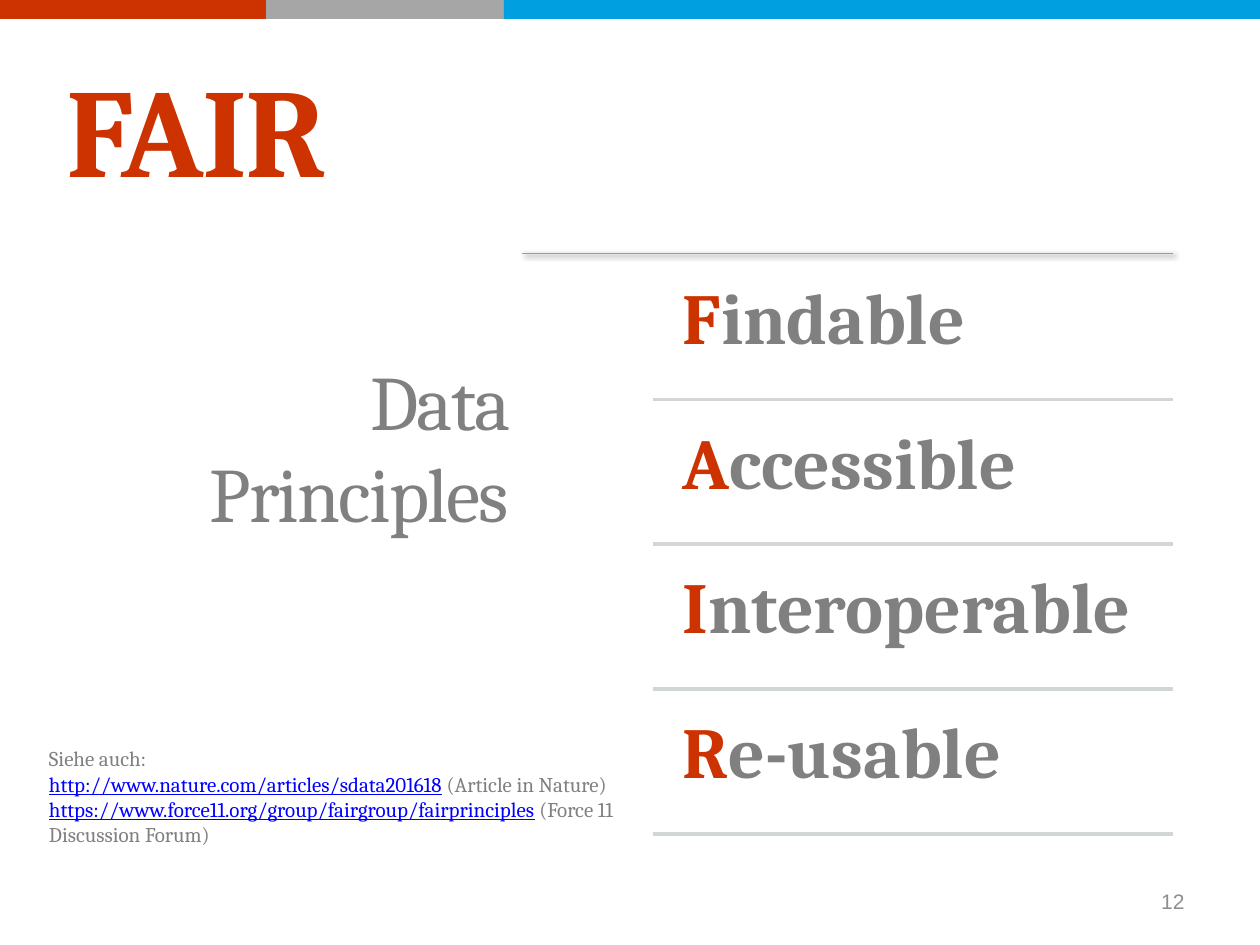
import pptx
import pptx.dml.color
import pptx.enum.shapes
import pptx.enum.text
import pptx.oxml
import pptx.oxml.ns
import pptx.util
from pptx.util import Inches

COLORS = {
    "red": "CC3300", "bar_gray": "A6A6A6", "blue": "009FDF",
    "gray": "808080", "link": "0000FF", "top_rule": "93A299",
    "rule": "D2D7D4", "number": "8E8E90",
}
ALIGN = pptx.enum.text.PP_ALIGN
PRINCIPLES = ["Findable", "Accessible", "Interoperable", "Re-usable"]
ROW_PITCH = 1.15
EFFECTS = '<a:effectLst xmlns:a="http://schemas.openxmlformats.org/drawingml/2006/main">%s</a:effectLst>'
SHADOW = ('<a:outerShdw blurRad="38100" dist="25400" dir="2700000" rotWithShape="0">'
          '<a:srgbClr val="000000"><a:alpha val="60000"/></a:srgbClr></a:outerShdw>')


def rgb(name):
    return pptx.dml.color.RGBColor.from_string(COLORS[name])


def add_bar(slide, left, width, color):
    bar = slide.shapes.add_shape(
        pptx.enum.shapes.MSO_SHAPE.RECTANGLE, Inches(left), 0, Inches(width), Inches(0.15))
    bar.shadow.inherit = False
    bar.fill.solid()
    bar.fill.fore_color.rgb = rgb(color)
    bar.line.fill.background()


def add_rule(slide, left, top, color, weight, effect=""):
    """Draw a horizontal line to the right margin."""
    rule = slide.shapes.add_connector(
        pptx.enum.shapes.MSO_CONNECTOR.STRAIGHT,
        Inches(left), Inches(top), Inches(9.31), Inches(top))
    rule.line.color.rgb = rgb(color)
    rule.line.width = pptx.util.Pt(weight)
    rule._element.spPr.append(pptx.oxml.parse_xml(EFFECTS % effect))


def add_text_box(slide, left, top, width, height):
    box = slide.shapes.add_textbox(Inches(left), Inches(top), Inches(width), Inches(height))
    box.text_frame.word_wrap = True
    return box.text_frame


def add_run(paragraph, text, size, color, bold=False, underline=False, font="Cambria"):
    run = paragraph.add_run()
    run.text = text
    run.font.name = font
    run.font.size = pptx.util.Pt(size)
    run.font.bold = bold
    run.font.underline = underline
    run.font.color.rgb = rgb(color)
    return run


def format_title(slide):
    title = slide.shapes.title
    title.left, title.top = Inches(0.29), Inches(0.56)
    title.width, title.height = Inches(3.85), Inches(3.56)
    frame = title.text_frame
    frame.word_wrap = True
    frame.auto_size = pptx.enum.text.MSO_AUTO_SIZE.NONE
    frame.vertical_anchor = pptx.enum.text.MSO_ANCHOR.MIDDLE
    acronym, subject = frame.paragraphs[0], frame.add_paragraph()
    acronym.alignment = ALIGN.LEFT
    acronym._p.get_or_add_pPr().set("marL", str(Inches(0.14)))
    subject.alignment = ALIGN.RIGHT
    subject.space_before = pptx.util.Pt(86)
    for run in (add_run(acronym, "FAIR", 72, "red", bold=True),
                add_run(subject, "Data Principles", 44, "gray")):
        run._r.get_or_add_rPr().set("spc", "-100")


def add_principle(slide, word, row):
    offset = row * ROW_PITCH
    frame = add_text_box(slide, 5.25, 2.07 + offset, 4.06, 1.1)
    frame.margin_left = frame.margin_right = Inches(0.17)
    frame.margin_top = frame.margin_bottom = Inches(0.17)
    paragraph = frame.paragraphs[0]
    paragraph.line_spacing = 0.9
    add_run(paragraph, word[0], 41, "red", bold=True)
    add_run(paragraph, word[1:], 41, "gray", bold=True)
    add_rule(slide, 5.18, 3.17 + offset, "rule", 2.08)


def add_references(slide):
    frame = add_text_box(slide, 0.29, 5.87, 4.92, 1.21)
    add_run(frame.paragraphs[0], "Siehe auch:", 12, "gray")
    for address, note in (
            ("http://www.nature.com/articles/sdata201618", " (Article in Nature)"),
            ("https://www.force11.org/group/fairgroup/fairprinciples",
             " (Force 11 Discussion Forum)")):
        paragraph = frame.add_paragraph()
        add_run(paragraph, address, 12, "link", underline=True)
        add_run(paragraph, note, 12, "gray")


def add_slide_number(slide):
    frame = add_text_box(slide, 7.17, 6.95, 2.33, 0.4)
    frame.vertical_anchor = pptx.enum.text.MSO_ANCHOR.MIDDLE
    frame.paragraphs[0].alignment = ALIGN.RIGHT
    add_run(frame.paragraphs[0], "12", 12, "number", font="Arial")


def main():
    presentation = pptx.Presentation()
    presentation.slide_width = Inches(10)
    presentation.slide_height = Inches(7.5)
    slide = presentation.slides.add_slide(presentation.slide_layouts[5])
    for left, width, color in ((0, 10, "bar_gray"), (0, 2.11, "red"), (4, 6, "blue")):
        add_bar(slide, left, width, color)
    add_rule(slide, 4.14, 2.01, "top_rule", 0.75, SHADOW)
    for row, word in enumerate(PRINCIPLES):
        add_principle(slide, word, row)
    add_references(slide)
    format_title(slide)
    add_slide_number(slide)
    presentation.save("out.pptx")


if __name__ == "__main__":
    main()
